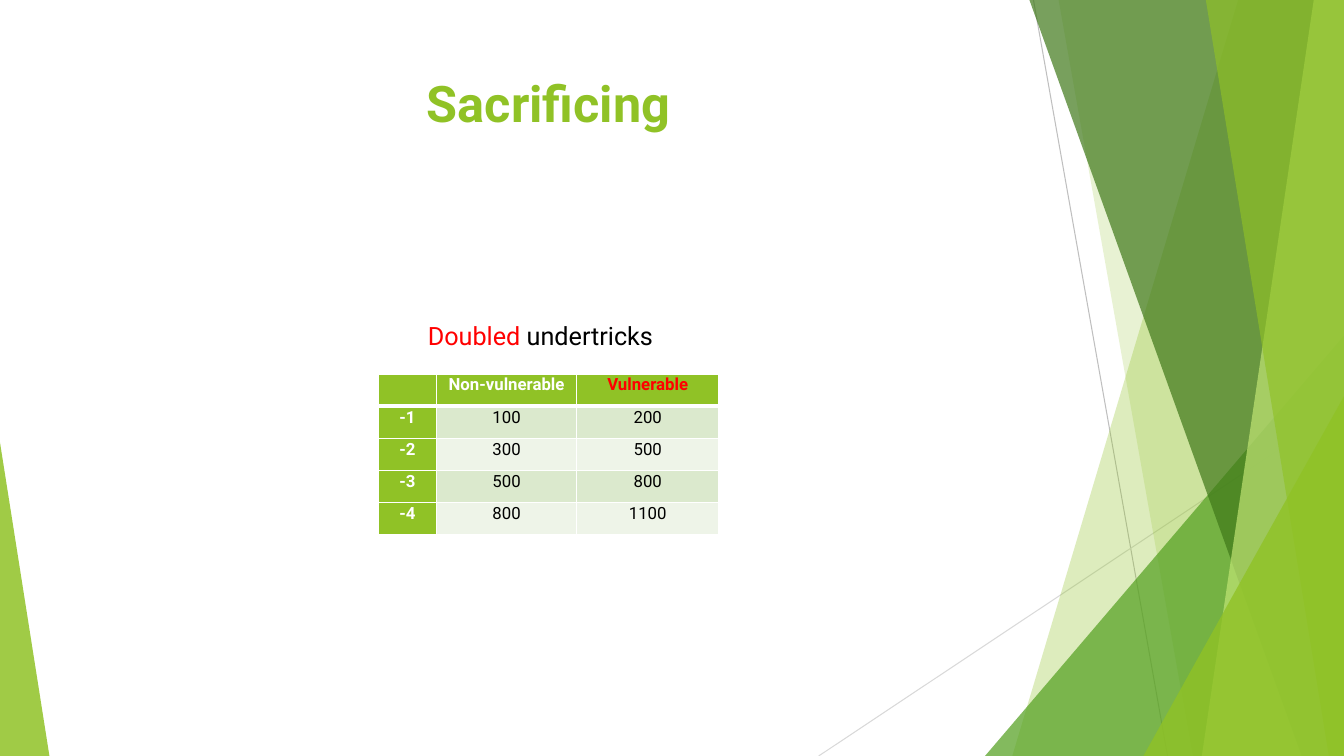
from lxml import etree
from pptx import Presentation
from pptx import util as u
from pptx.dml.color import RGBColor
from pptx.enum import shapes, text
from pptx.oxml.ns import qn

FONT = "Roboto"
LIME, RED, WHITE, BLACK = "90C226", "FF0000", "FFFFFF", "000000"
BANDS = ["DBE9CD", "EEF4E8"]
TITLE = "Sacrificing"
LABEL = [("Doubled", RED), (" undertricks", BLACK)]
TABLE = [
    ["", "Non-vulnerable", "Vulnerable"],
    ["-1", "100", "200"],
    ["-2", "300", "500"],
    ["-3", "500", "800"],
    ["-4", "800", "1100"],
]
COLS, ROW = [0.58, 1.39, 1.41], 0.32
WIDE, HIGH = 13.33, 7.5
LINES = [  # start, end, colour
    ((10.25, 0), (11.58, HIGH), "BFBFBF"),
    ((WIDE, 4.03), (8.12, HIGH), "D9D9D9"),
]
# A band has (top x, bottom x) and runs to the right edge;
# a triangle has (left, top, width, apex).
FACETS = [
    ("band", (12.28, 10.04), LIME, 30),
    ("band", (10.5, 11.83), LIME, 20),
    ("triangle", (9.77, 3.33, 3.56, 1), "54A021", 72),
    ("band", (10.21, 12.91), "3F7819", 70),
    ("band", (13.03, 11.92), "C0E474", 70),
    ("band", (11.96, 13.18), LIME, 65),
    ("triangle", (11.34, 3.93, 1.99, 1), LIME, 80),
    ("triangle", (0, 4.39, 0.49, 0), LIME, 85),
]


def rgb(code):
    return RGBColor.from_string(code)


def paint(shape, code, alpha):
    shape.shadow.inherit = False
    shape.line.fill.background()
    shape.fill.solid()
    shape.fill.fore_color.rgb = rgb(code)
    tone = shape.element.spPr.find(qn("a:solidFill"))[0]
    etree.SubElement(tone, qn("a:alpha"), val=str(alpha * 1000))


def style(font, size, code, bold=False):
    font.name, font.size, font.bold = FONT, u.Pt(size), bold
    font.color.rgb = rgb(code)


def band(top, base):
    spots = [(top, 0), (WIDE, 0), (WIDE, HIGH), (base, HIGH)]
    spots = [(u.Inches(x), u.Inches(y)) for x, y in spots]
    form = slide.shapes.build_freeform(*spots[0])
    form.add_line_segments(spots[1:])
    return form.convert_to_shape()


def triangle(left, top, width, apex):
    box = [u.Inches(n) for n in (left, top, width, HIGH - top)]
    shape = slide.shapes.add_shape(shapes.MSO_SHAPE.ISOSCELES_TRIANGLE, *box)
    shape.adjustments[0] = apex
    return shape


def border(cell, base):
    """Draw white sides, with the given width in points at the bottom."""
    props = cell._tc.get_or_add_tcPr()
    for spot, (side, width) in enumerate([("L", 1), ("R", 1), ("T", 1), ("B", base)]):
        line = etree.Element(qn("a:ln" + side), w=str(u.Pt(width)))
        fill = etree.SubElement(line, qn("a:solidFill"))
        etree.SubElement(fill, qn("a:srgbClr"), val=WHITE)
        props.insert(spot, line)


deck = Presentation()
deck.slide_width, deck.slide_height = u.Inches(WIDE), u.Inches(HIGH)
slide = deck.slides.add_slide(deck.slide_layouts[5])

for start, end, code in LINES:
    ends = [u.Inches(n) for n in start + end]
    line = slide.shapes.add_connector(shapes.MSO_CONNECTOR.STRAIGHT, *ends)
    line.line.color.rgb, line.line.width = rgb(code), u.Pt(0.75)
    etree.SubElement(line.element.spPr, qn("a:effectLst"))

for kind, size, code, alpha in FACETS:
    paint((band if kind == "band" else triangle)(*size), code, alpha)

title = slide.shapes.title
title.left, title.top = u.Inches(0.74), u.Inches(0.67)
title.width, title.height = u.Inches(9.4), u.Inches(1.44)
frame = title.text_frame
frame.text, frame.vertical_anchor = TITLE, text.MSO_ANCHOR.TOP
frame.paragraphs[0].alignment = text.PP_ALIGN.CENTER
style(frame.paragraphs[0].font, 36, LIME, True)
title.element.getparent().append(title.element)

box = [u.Inches(n) for n in (3.75, 3.71, sum(COLS), ROW * len(TABLE))]
table = slide.shapes.add_table(len(TABLE), len(COLS), *box).table
for col, width in zip(table.columns, COLS):
    col.width = u.Inches(width)
for r, row in enumerate(TABLE):
    for c, word in enumerate(row):
        cell = table.cell(r, c)
        head = r == 0 or c == 0
        cell.margin_left = cell.margin_right = u.Inches(0.07)
        cell.margin_top = cell.margin_bottom = 0
        cell.fill.solid()
        cell.fill.fore_color.rgb = rgb(LIME if head else BANDS[(r - 1) % 2])
        border(cell, 3 if r == 0 else 1)
        cell.text = word
        para = cell.text_frame.paragraphs[0]
        para.alignment, para.line_spacing = text.PP_ALIGN.CENTER, 1.07
        code = RED if word == "Vulnerable" else WHITE if head else BLACK
        style(para.font, 12, code, head)

box = [u.Inches(n) for n in (3.27, 3.13, 4.18, 0.4)]
frame = slide.shapes.add_textbox(*box).text_frame
frame.word_wrap = True
para = frame.paragraphs[0]
para.alignment = text.PP_ALIGN.CENTER
for word, code in LABEL:
    run = para.add_run()
    run.text = word
    style(run.font, 18, code)

deck.save("out.pptx")
